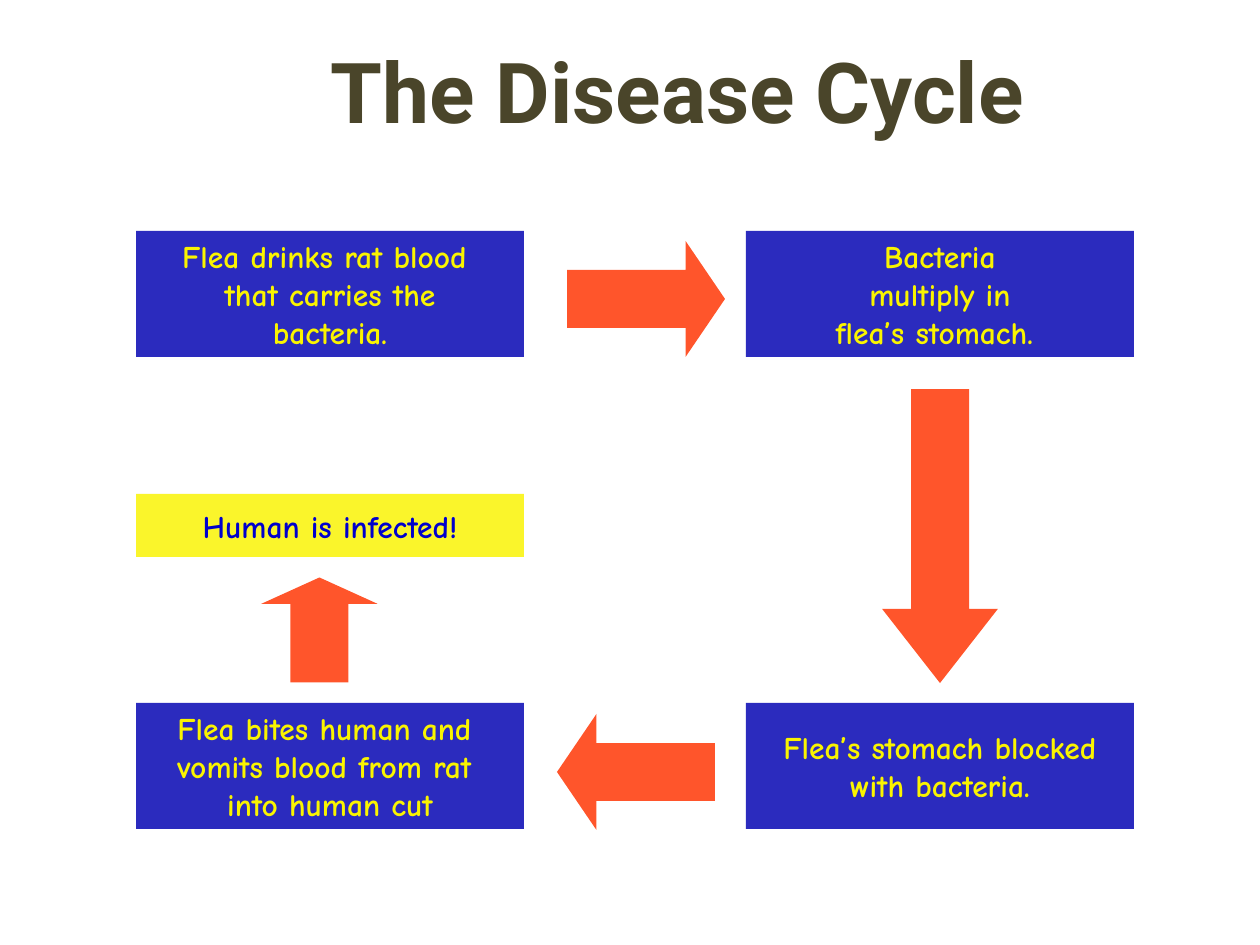
import pptx
import pptx.util
import pptx.dml.color
import pptx.enum.shapes
import pptx.enum.text
import pptx.oxml.ns
import lxml.etree

PX = 914400 // 126
COLORS = {"title": "4A452A", "blue": "0000B2", "yellow": "FAF400",
          "ink": "0000CC", "arrow": "FF3300"}
MSO = pptx.enum.shapes.MSO_SHAPE
ANCHOR = pptx.enum.text.MSO_ANCHOR
CENTER = pptx.enum.text.PP_ALIGN.CENTER


def add_block(kind, box, color):
    sp = slide.shapes.add_shape(kind, *[v * PX for v in box])
    sp.shadow.inherit = False
    sp.line.fill.background()
    sp.fill.solid()
    sp.fill.fore_color.rgb = pptx.dml.color.RGBColor.from_string(COLORS[color])
    clr = sp.fill._xPr.find(".//" + pptx.oxml.ns.qn("a:srgbClr"))
    lxml.etree.SubElement(clr, pptx.oxml.ns.qn("a:alpha"), val="83000")
    return sp


def write(tf, paragraphs, color, fmt):
    for i, text in enumerate(paragraphs):
        p = tf.paragraphs[0] if i == 0 else tf.add_paragraph()
        p.text = text
        p.alignment = CENTER
        for r in p.runs:
            for key, value in fmt.items():
                setattr(r.font, key, value)
            r.font.color.rgb = pptx.dml.color.RGBColor.from_string(COLORS[color])


prs = pptx.Presentation()
prs.slide_width = 1260 * PX
prs.slide_height = 945 * PX
slide = prs.slides.add_slide(prs.slide_layouts[5])

title = slide.shapes.title
title.left, title.top, title.width, title.height = [v * PX for v in (147, 32, 1061, 115)]
tf = title.text_frame
tf.auto_size = pptx.enum.text.MSO_AUTO_SIZE.NONE
tf.vertical_anchor = ANCHOR.BOTTOM
write(tf, ["The Disease Cycle"], "title",
      {"name": "Roboto", "size": pptx.util.Pt(48), "bold": True})

LEFT, RIGHT, TOP, BOTTOM = 136, 746, 231, 703
steps = [
    (LEFT, TOP, 126, "blue", "yellow", ["Flea drinks rat blood \nthat carries the\n bacteria. "]),
    (RIGHT, BOTTOM, 126, "blue", "yellow", ["Flea’s stomach blocked\nwith bacteria."]),
    (RIGHT, TOP, 126, "blue", "yellow", ["Bacteria", "multiply in", "flea’s stomach. "]),
    (LEFT, BOTTOM, 126, "blue", "yellow",
     ["Flea bites human and \nvomits blood from rat \ninto human cut"]),
    (LEFT, 494, 63, "yellow", "ink", ["Human is infected!"]),
]
for x, y, h, fill, ink, text in steps:
    sp = add_block(MSO.RECTANGLE, (x, y, 388, h), fill)
    tf = sp.text_frame
    tf.word_wrap = False
    tf.vertical_anchor = ANCHOR.MIDDLE
    write(tf, text, ink, {"name": "Comic Neue", "size": pptx.util.Pt(18), "bold": True})

arrows = [
    (567, 241, 158, 0, 0.34),
    (793, 478, 294, 90, 0.64),
    (557, 714, 158, 180, 0.34),
    (267, 572, 105, 270, 0.25),
]
for x, y, length, angle, head in arrows:
    sp = add_block(MSO.RIGHT_ARROW, (x, y, length, 116), "arrow")
    sp.rotation = angle
    sp.adjustments[0] = 0.5
    sp.adjustments[1] = head

prs.save("out.pptx")
